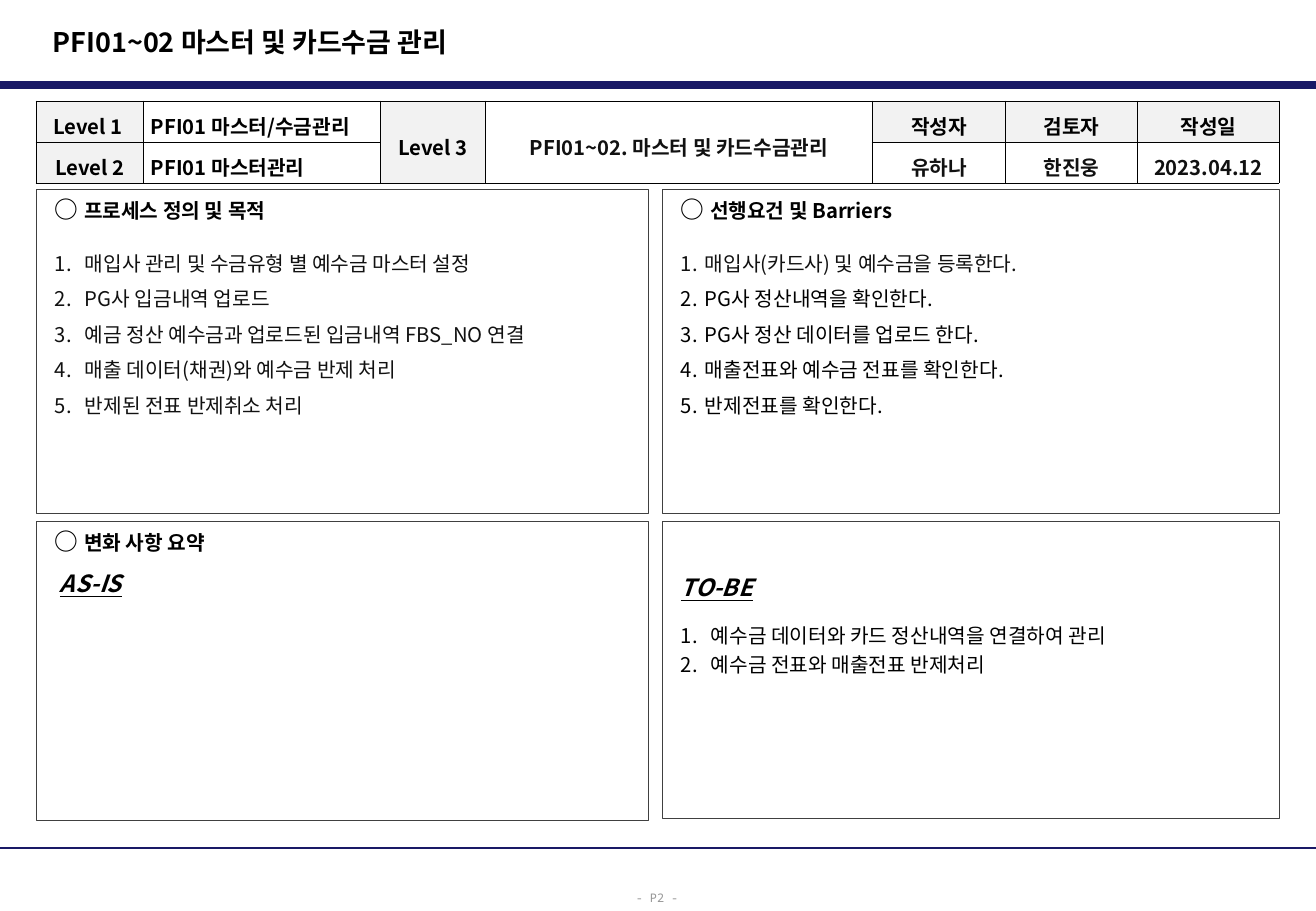
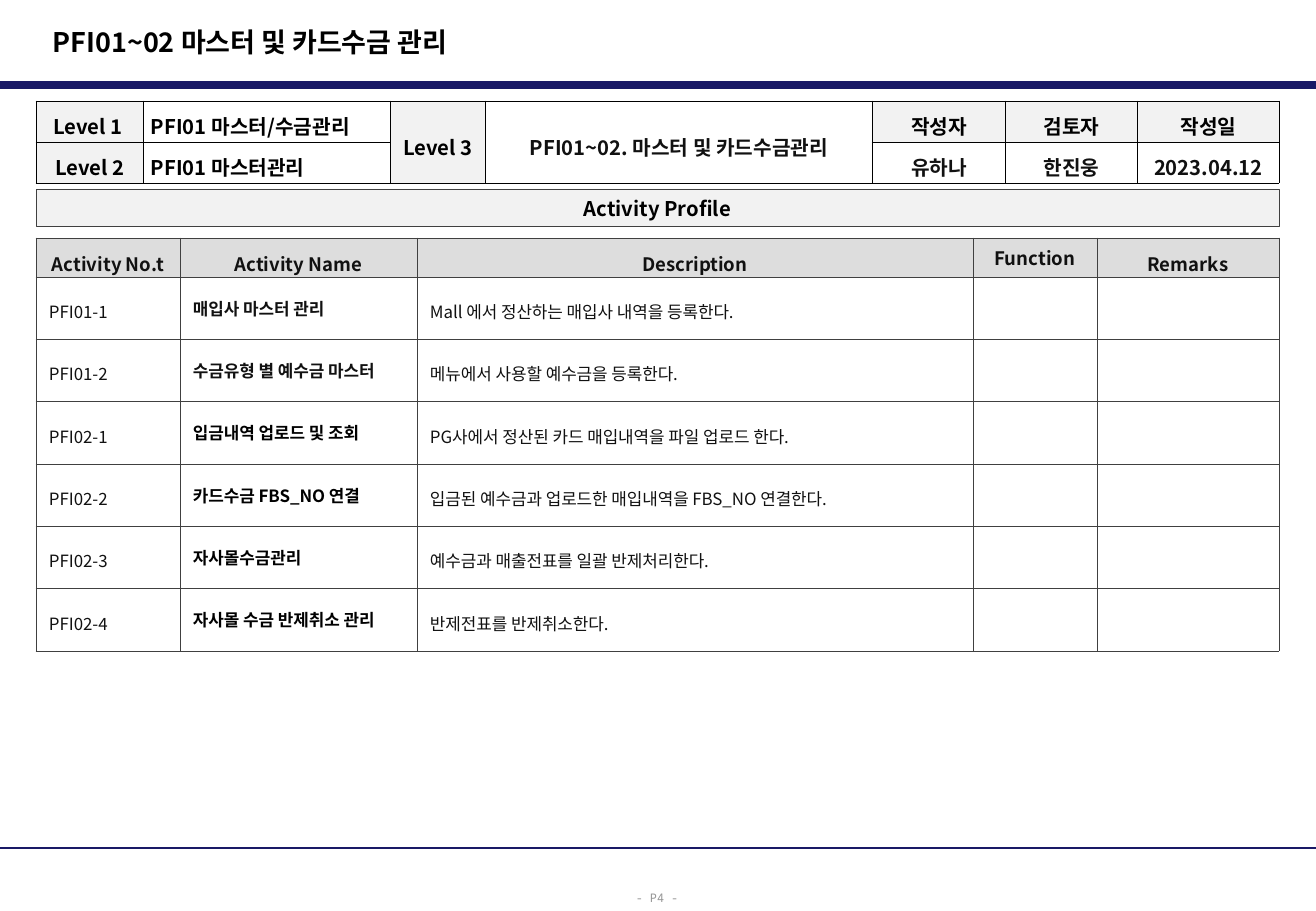
from lxml import etree
from pptx import Presentation
from pptx.dml.color import RGBColor
from pptx.enum.shapes import MSO_CONNECTOR, MSO_SHAPE
from pptx.enum.text import MSO_ANCHOR, PP_ALIGN
from pptx.oxml.ns import qn
from pptx.util import Emu, Pt

LEFT, CENTER = PP_ALIGN.LEFT, PP_ALIGN.CENTER
TOP, MIDDLE = MSO_ANCHOR.TOP, MSO_ANCHOR.MIDDLE
STRAIGHT, RECTANGLE = MSO_CONNECTOR.STRAIGHT, MSO_SHAPE.RECTANGLE
SCALE = 914400 / 121.5
WIDTH, HEIGHT = 1316, 911
MARGIN, CONTENT_WIDTH = 36, 1243
SANS, MONO = "Noto Sans CJK KR", "Noto Sans Mono"
NAVY, BLACK, INK, FRAME = "191966", "000000", "111111", "404040"
PALE, SILVER, GRAY = "F2F2F2", "DDDDDD", "969696"


def px(length):
    """Turn pixels into EMU."""
    return Emu(round(length * SCALE))


def rgb(value):
    """Turn a hex string into a colour."""
    return RGBColor.from_string(value)


class Deck:
    """Hold the shared style and the current slide."""

    def __init__(self):
        """Start an empty presentation."""
        self.prs = Presentation()
        self.prs.slide_width, self.prs.slide_height = px(WIDTH), px(HEIGHT)
        self.slide = None

    def page(self, title, number, level_columns):
        """Add a slide with its title, rules, footer and level table."""
        self.slide = self.prs.slides.add_slide(self.prs.slide_layouts[6])
        self.rule(85, 4.5)
        self.rule(848, 1.5)
        footer = self.textbox(624, 880, 68, 30, wrap=False)
        self.run(self.style(footer.paragraphs[0], spacing=1.3),
                 f"- P{number} -", 7, GRAY, font=MONO)
        heading = self.textbox(41, 19, 864, 46, anchor=MIDDLE)
        self.run(heading.paragraphs[0], title, 16, bold=True)
        self.levels(level_columns)

    def rule(self, y, weight):
        """Draw a rule across the slide."""
        line = self.slide.shapes.add_connector(STRAIGHT, 0, px(y), px(WIDTH), px(y))
        line.line.color.rgb = rgb(NAVY)
        line.line.width = Pt(weight)
        etree.SubElement(line._element.spPr, qn("a:effectLst"))

    def textbox(self, x, y, w, h, anchor=TOP, wrap=True):
        """Add a text box and return its frame."""
        frame = self.slide.shapes.add_textbox(px(x), px(y), px(w), px(h)).text_frame
        frame.word_wrap = wrap
        frame.vertical_anchor = anchor
        return frame

    def panel(self, x, y, w, h, fill=None, anchor=TOP, insets=(12, 6, 12, 6)):
        """Add a framed rectangle and return its text frame."""
        shape = self.slide.shapes.add_shape(RECTANGLE, px(x), px(y), px(w), px(h))
        shape.shadow.inherit = False
        self.paint(shape, fill)
        shape.line.color.rgb = rgb(FRAME)
        shape.line.width = Pt(0.5)
        frame = shape.text_frame
        frame.word_wrap = True
        frame.vertical_anchor = anchor
        self.inset(frame, insets)
        return frame

    def paint(self, target, fill):
        """Fill a shape or cell, or leave it clear."""
        if fill:
            target.fill.solid()
            target.fill.fore_color.rgb = rgb(fill)
        else:
            target.fill.background()

    def inset(self, target, insets):
        """Set the left, top, right and bottom margins."""
        (target.margin_left, target.margin_top,
         target.margin_right, target.margin_bottom) = map(px, insets)

    def style(self, paragraph, align=LEFT, spacing=1.0, before=0):
        """Set alignment and spacing of a paragraph."""
        paragraph.alignment = align
        paragraph.line_spacing = spacing
        if before:
            paragraph.space_before = Pt(before)
        return paragraph

    def run(self, paragraph, text, size, color=BLACK, bold=False, slanted=False, font=SANS):
        """Add one run; slanted means italic and underlined."""
        piece = paragraph.add_run()
        piece.text = text
        face = piece.font
        face.size, face.bold, face.name = Pt(size), bold, font
        face.italic = face.underline = slanted
        face.color.rgb = rgb(color)
        props = piece._r.get_or_add_rPr()
        props.set("kern", "0")
        etree.SubElement(props, qn("a:ea"), typeface=font)

    def heading(self, frame, text):
        """Write a circled section heading."""
        paragraph = self.style(frame.paragraphs[0])
        self.run(paragraph, "○ ", 14, bold=True)
        self.run(paragraph, text, 12, bold=True)

    def numbered(self, frame, items, hang, spacing, first, gap, colors):
        """Append an automatically numbered list."""
        for index, (item, color) in enumerate(zip(items, colors)):
            paragraph = frame.add_paragraph()
            props = paragraph._p.get_or_add_pPr()
            props.set("marL", str(px(hang)))
            props.set("indent", str(-px(hang)))
            etree.SubElement(props, qn("a:buFont"), typeface=SANS)
            etree.SubElement(props, qn("a:buAutoNum"), type="arabicPeriod")
            self.style(paragraph, spacing=spacing, before=gap if index else first)
            self.run(paragraph, item, 12, color)

    def table(self, y, columns, rows, border):
        """Add a plain bordered table."""
        grid = self.slide.shapes.add_table(
            len(rows), len(columns), px(MARGIN), px(y), px(sum(columns)), px(sum(rows))).table
        grid.first_row = grid.horz_banding = False
        for column, width in zip(grid.columns, columns):
            column.width = px(width)
        for row, height in zip(grid.rows, rows):
            row.height = px(height)
        for cell in grid.iter_cells():
            cell.fill.background()
            props = cell._tc.get_or_add_tcPr()
            for position, side in enumerate(("lnL", "lnR", "lnT", "lnB")):
                edge = etree.Element(qn(f"a:{side}"), w=str(Pt(0.5)))
                solid = etree.SubElement(edge, qn("a:solidFill"))
                etree.SubElement(solid, qn("a:srgbClr"), val=border)
                props.insert(position, edge)
        return grid

    def cell(self, cell, text, size, color=INK, bold=True, align=LEFT,
             fill=None, spacing=1.3, insets=(13, 5, 13, 5)):
        """Write and paint one table cell."""
        self.paint(cell, fill)
        self.inset(cell, insets)
        cell.vertical_anchor = MIDDLE
        paragraph = self.style(cell.text_frame.paragraphs[0], align, spacing)
        self.run(paragraph, text, size, color, bold)

    def levels(self, columns):
        """Add the process level table."""
        grid = self.table(101, columns, [41, 41], BLACK)
        for column in (2, 3):
            grid.cell(0, column).merge(grid.cell(1, column))
        labels = {(0, 0): "Level 1 ", (1, 0): "Level 2", (0, 2): "Level 3",
                  (0, 4): "작성자", (0, 5): "검토자", (0, 6): "작성일"}
        names = {(0, 1): "PFI01 마스터/수금관리", (1, 1): "PFI01 마스터관리"}
        values = {(0, 3): "PFI01~02. 마스터 및 카드수금관리",
                  (1, 4): "유하나", (1, 5): "한진웅", (1, 6): "2023.04.12"}
        for group, color, align, fill in ((labels, BLACK, CENTER, PALE),
                                          (names, BLACK, LEFT, None),
                                          (values, INK, CENTER, None)):
            for place, text in group.items():
                self.cell(grid.cell(*place), text, 12, color, align=align,
                          fill=fill, insets=(8, 1, 7, 1))

    def activities(self, headers, entries):
        """Add the activity table."""
        grid = self.table(238, [144, 237, 556, 124, 182], [39] + [62, 62, 63] * 2, FRAME)
        for column, header in enumerate(headers):
            single = header == "Function"
            self.cell(grid.cell(0, column), header, 11, align=CENTER, fill=SILVER,
                      spacing=1.0 if single else 1.3,
                      insets=(13, 0, 13, 0) if single else (13, 4, 13, 0))
        for row, (code, name, description) in enumerate(entries, 1):
            self.cell(grid.cell(row, 0), code, 10, bold=False)
            self.cell(grid.cell(row, 1), name, 10, INK if row < 3 else BLACK, spacing=1.0)
            self.cell(grid.cell(row, 2), description, 10, bold=False)


def main():
    """Build both slides."""
    deck = Deck()
    title = "PFI01~02 마스터 및 카드수금 관리"
    upper, lower, right = 189, 521, 662
    left_width, right_width = 612, 617
    insets = (19, 6, 12, 6)

    deck.page(title, 2, [107, 237, 105, 387, 133, 132, 142])
    purpose = deck.panel(MARGIN, upper, left_width, 325, insets=insets)
    deck.heading(purpose, "프로세스 정의 및 목적")
    deck.numbered(purpose, [
        "매입사 관리 및 수금유형 별 예수금 마스터 설정",
        "PG사 입금내역 업로드",
        "예금 정산 예수금과 업로드된 입금내역 FBS_NO 연결",
        "매출 데이터(채권)와 예수금 반제 처리",
        "반제된 전표 반제취소 처리",
    ], 30, 1.3, 12, 2.4, [INK] * 5)

    barriers = deck.panel(right, upper, right_width, 325, insets=insets)
    deck.heading(barriers, "선행요건 및 Barriers")
    deck.numbered(barriers, [
        "매입사(카드사) 및 예수금을 등록한다.",
        "PG사 정산내역을 확인한다.",
        "PG사 정산 데이터를 업로드 한다.",
        "매출전표와 예수금 전표를 확인한다.",
        "반제전표를 확인한다.",
    ], 24, 1.3, 12, 2.4, [INK] + [BLACK] * 4)

    as_is = deck.panel(MARGIN, lower, left_width, 299, insets=insets)
    deck.heading(as_is, "변화 사항 요약")
    current = deck.style(as_is.add_paragraph(), before=8)
    current._p.get_or_add_pPr().set("marL", str(px(5)))
    deck.run(current, "AS-IS", 14, bold=True, slanted=True)

    to_be = deck.panel(right, lower, right_width, 298, insets=(19, 52, 12, 6))
    deck.run(deck.style(to_be.paragraphs[0]), "TO-BE", 14, bold=True, slanted=True)
    deck.numbered(to_be, [
        "예수금 데이터와 카드 정산내역을 연결하여 관리",
        "예수금 전표와 매출전표 반제처리",
    ], 30, 1.2, 10, 0, [BLACK] * 2)

    deck.page(title, 4, [107, 247, 95, 387, 133, 132, 142])
    profile = deck.panel(MARGIN, upper, CONTENT_WIDTH, 38, PALE, MIDDLE)
    deck.run(deck.style(profile.paragraphs[0], CENTER), "Activity Profile", 12, bold=True)
    deck.activities(
        ["Activity No.t", "Activity Name", "Description", "Function", "Remarks"],
        [("PFI01-1", "매입사 마스터 관리", "Mall 에서 정산하는 매입사 내역을 등록한다."),
         ("PFI01-2", "수금유형 별 예수금 마스터", "메뉴에서 사용할 예수금을 등록한다."),
         ("PFI02-1", "입금내역 업로드 및 조회",
          "PG사에서 정산된 카드 매입내역을 파일 업로드 한다."),
         ("PFI02-2", "카드수금 FBS_NO 연결",
          "입금된 예수금과 업로드한 매입내역을 FBS_NO 연결한다."),
         ("PFI02-3", "자사몰수금관리", "예수금과 매출전표를 일괄 반제처리한다."),
         ("PFI02-4", "자사몰 수금 반제취소 관리", "반제전표를 반제취소한다.")])
    deck.prs.save("out.pptx")


if __name__ == "__main__":
    main()
